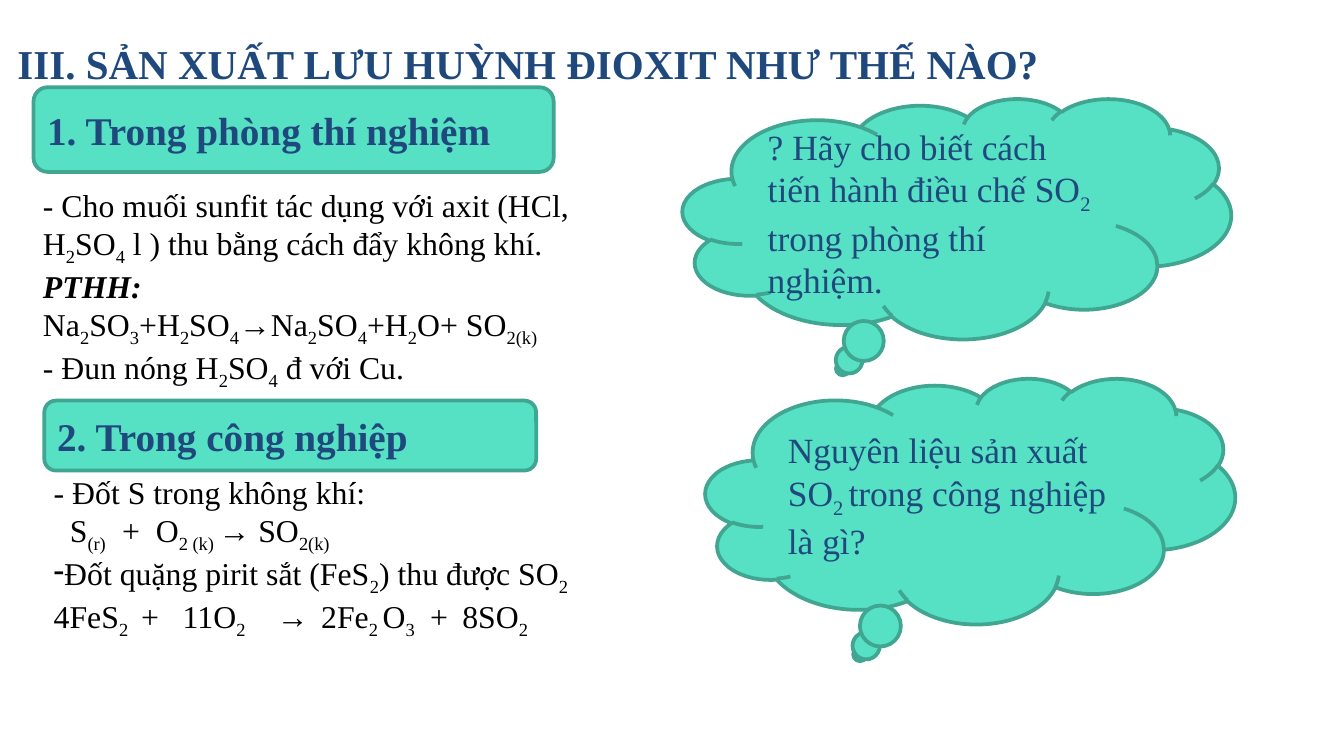
from lxml.etree import SubElement
from pptx import Presentation
from pptx.dml.color import RGBColor
from pptx.enum.shapes import MSO_SHAPE
from pptx.enum.text import MSO_ANCHOR, PP_ALIGN
from pptx.oxml.ns import qn
from pptx.util import Inches, Pt

NAVY, BLACK, WHITE = "1F497D", "000000", "FFFFFF"
MINT, GREEN = "56E0C4", "40A691"

presentation = Presentation()
presentation.slide_width, presentation.slide_height = Inches(10), Inches(5.625)
slide = presentation.slides.add_slide(presentation.slide_layouts[6])
column = presentation.slide_width / 100
row = presentation.slide_height / 100


def color(hex_string):
    return RGBColor.from_string(hex_string)


def add_text(frame, text, size, hue=NAVY, bold=False, italic=False,
             bullet=None, tabs=()):
    """Append a paragraph; text between ~ marks is subscript, tabs are in inches."""
    paragraph = frame.paragraphs[0]
    if paragraph.runs:
        paragraph = frame.add_paragraph()
    paragraph.alignment = PP_ALIGN.LEFT
    properties = paragraph._p.get_or_add_pPr()
    if bullet:
        properties.set("marL", "0")
        properties.set("indent", "0")
        SubElement(properties, qn("a:buFontTx"))
        SubElement(properties, qn("a:buChar"), char=bullet)
    if tabs:
        tab_list = SubElement(properties, qn("a:tabLst"))
        for position in tabs:
            SubElement(tab_list, qn("a:tab"), pos=str(Inches(position)), algn="l")
    for index, part in enumerate(text.split("~")):
        if not part:
            continue
        run = paragraph.add_run()
        run.text = part
        run.font.name = "Times New Roman"
        run.font.size = Pt(size)
        run.font.bold, run.font.italic = bold, italic
        run.font.color.rgb = color(hue)
        if index % 2:
            run._r.get_or_add_rPr().set("baseline", "-25000")


HEADING = MSO_SHAPE.FLOWCHART_ALTERNATE_PROCESS
PANEL = MSO_SHAPE.FLOWCHART_PROCESS
CLOUD = MSO_SHAPE.CLOUD_CALLOUT
heading_format = dict(size=21, bold=True)
body_format = dict(size=17, hue=BLACK)
question_format = dict(size=19)

# Kind, left and width in columns, top and height in rows, fill, line, paragraphs
blocks = [
    (None, 0.6, 4.4, 79.1, 19.2, None, None, [
        ("III. SẢN XUẤT LƯU HUỲNH ĐIOXIT NHƯ THẾ NÀO?", dict(size=22, bold=True))]),
    (HEADING, 2.5, 11.55, 38.7, 11.2, MINT, GREEN, [
        ("1. Trong phòng thí nghiệm", heading_format)]),
    (PANEL, 2.5, 24.9, 43.3, 26.5, WHITE, WHITE, [
        ("- Cho muối sunfit tác dụng với axit (HCl, H~2~SO~4~ l ) thu bằng cách "
         "đẩy không khí.", body_format),
        ("PTHH:", dict(body_format, bold=True, italic=True)),
        ("Na~2~SO~3~+H~2~SO~4~→Na~2~SO~4~+H~2~O+ SO~2(k)~", body_format),
        ("- Đun nóng H~2~SO~4~ đ với Cu.", body_format)]),
    (CLOUD, 50.8, 13, 40.8, 31.8, MINT, GREEN, [
        ("? Hãy cho biết cách tiến hành điều chế SO~2 ~trong phòng thí nghiệm.",
         question_format)]),
    (HEADING, 3.3, 53, 36.6, 9.25, MINT, GREEN, [
        ("2. Trong công nghiệp", heading_format)]),
    (PANEL, 3.3, 63.3, 41.3, 20.6, WHITE, WHITE, [
        ("- Đốt S trong không khí:", body_format),
        ("\tS~(r)~\t+\tO~2 (k) ~→ SO~2(k)~",
         dict(body_format, tabs=(0.12, 0.51, 0.76))),
        ("Đốt quặng pirit sắt (FeS~2~) thu được SO~2~", dict(body_format, bullet="-")),
        ("4FeS~2~\t+\t11O~2~\t→\t2Fe~2 ~O~3~\t+\t8SO~2~",
         dict(body_format, tabs=(0.65, 0.96, 1.66, 1.99, 2.8, 3.04)))]),
    (CLOUD, 52.5, 50, 39.4, 32.5, MINT, GREEN, [
        ("Nguyên liệu sản xuất SO~2 ~trong công nghiệp là gì?", question_format)]),
]

for kind, left, top, width, height, fill, line, paragraphs in blocks:
    box = [int(length) for length in
           (left * column, top * row, width * column, height * row)]
    if kind is None:
        shape = slide.shapes.add_textbox(*box)
    else:
        shape = slide.shapes.add_shape(kind, *box)
        shape.shadow.inherit = False
        shape.fill.solid()
        shape.fill.fore_color.rgb = color(fill)
        shape.line.color.rgb = color(line)
        shape.line.width = Pt(2)
    frame = shape.text_frame
    frame.word_wrap = True
    frame.vertical_anchor = MSO_ANCHOR.MIDDLE if kind else MSO_ANCHOR.TOP
    frame.margin_left = frame.margin_right = Inches(0.07)
    frame.margin_top = frame.margin_bottom = Inches(0.04)
    for text, text_format in paragraphs:
        add_text(frame, text, **text_format)

presentation.save("out.pptx")
